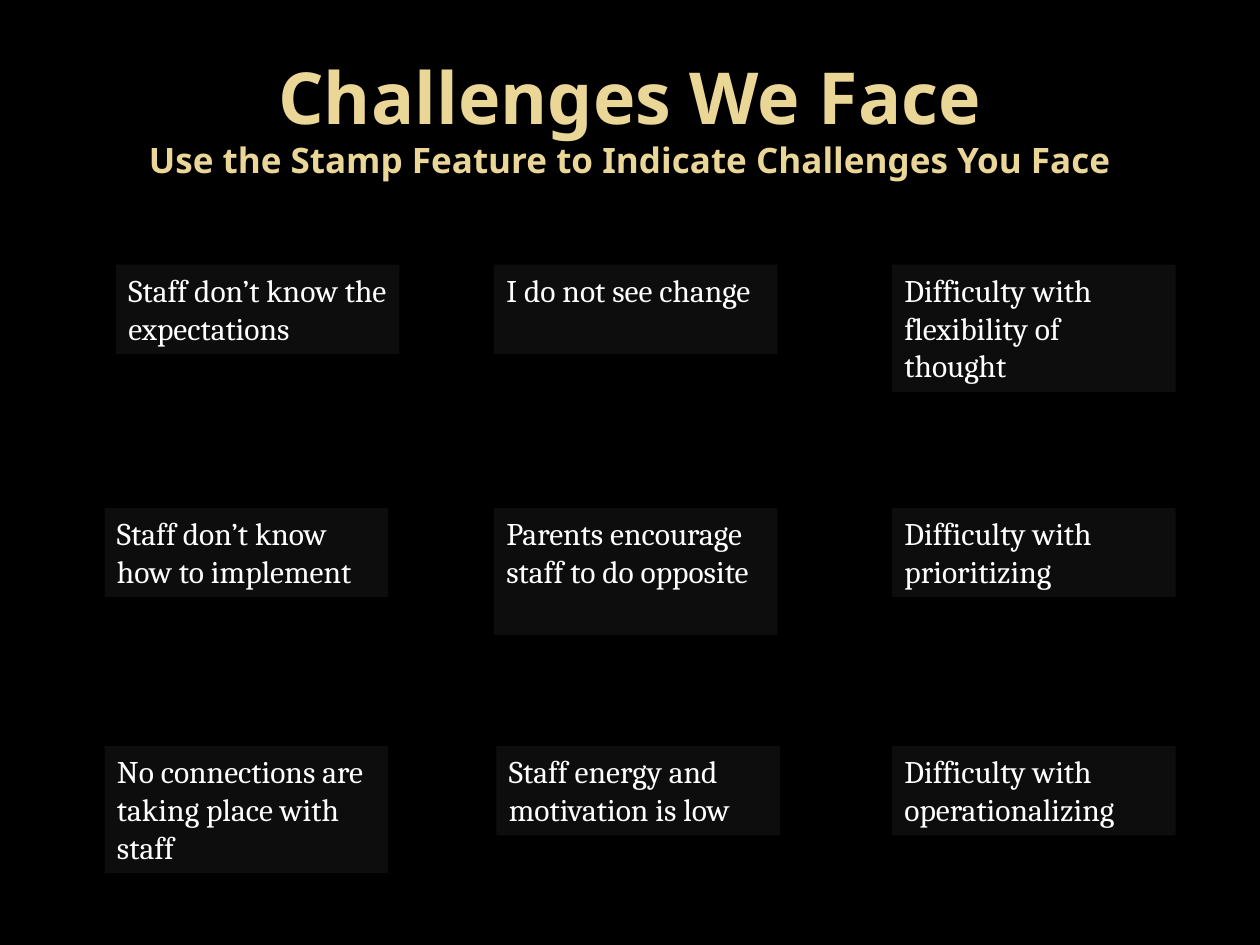
from pptx import Presentation
from pptx.dml.color import RGBColor
from pptx.enum.shapes import MSO_SHAPE
from pptx.enum.text import MSO_ANCHOR, PP_ALIGN
from pptx.util import Inches, Pt


def color(hex_value):
    return RGBColor.from_string(hex_value)


presentation = Presentation()
presentation.slide_width = Inches(10)
presentation.slide_height = Inches(7.5)
slide = presentation.slides.add_slide(presentation.slide_layouts[6])
slide.background.fill.solid()
slide.background.fill.fore_color.rgb = color("000000")

# Title with a smaller second line
title = slide.shapes.add_textbox(Inches(0.5), Inches(0.3), Inches(9), Inches(1.25))
title.text_frame.word_wrap = True
title.text_frame.vertical_anchor = MSO_ANCHOR.MIDDLE
paragraph = title.text_frame.paragraphs[0]
paragraph.alignment = PP_ALIGN.CENTER
paragraph.font.name = "Noto Sans"
paragraph.font.bold = True
paragraph.font.color.rgb = color("EAD696")
heading = paragraph.add_run()
heading.text = "Challenges We Face"
heading.font.size = Pt(41)
paragraph.add_line_break()
subheading = paragraph.add_run()
subheading.text = "Use the Stamp Feature to Indicate Challenges You Face"
subheading.font.size = Pt(20)

# Challenge boxes by row: left edge, number of lines, text
row_tops = [2.1, 4.03, 5.92]
rows = [
    [
        (0.92, 2, "Staff don’t know the expectations"),
        (3.92, 2, "I do not see change"),
        (7.08, 3, "Difficulty with flexibility of thought"),
    ],
    [
        (0.83, 2, "Staff don’t know how to implement"),
        (3.92, 3, "Parents encourage staff to do opposite"),
        (7.08, 2, "Difficulty with prioritizing"),
    ],
    [
        (0.83, 3, "No connections are taking place with staff"),
        (3.94, 2, "Staff energy and motivation is low"),
        (7.08, 2, "Difficulty with operationalizing"),
    ],
]
line_height = 0.3
vertical_padding = 0.11

for top, boxes in zip(row_tops, rows):
    for left, lines, text in boxes:
        height = lines * line_height + vertical_padding
        shape = slide.shapes.add_shape(
            MSO_SHAPE.RECTANGLE, Inches(left), Inches(top), Inches(2.25), Inches(height)
        )
        shape.shadow.inherit = False
        shape.fill.solid()
        shape.fill.fore_color.rgb = color("0D0D0D")
        shape.line.fill.background()
        shape.text_frame.word_wrap = True
        shape.text_frame.vertical_anchor = MSO_ANCHOR.TOP
        paragraph = shape.text_frame.paragraphs[0]
        paragraph.text = text
        paragraph.alignment = PP_ALIGN.LEFT
        paragraph.font.name = "Cambria"
        paragraph.font.size = Pt(18)
        paragraph.font.color.rgb = color("FFFFFF")

presentation.save("out.pptx")
